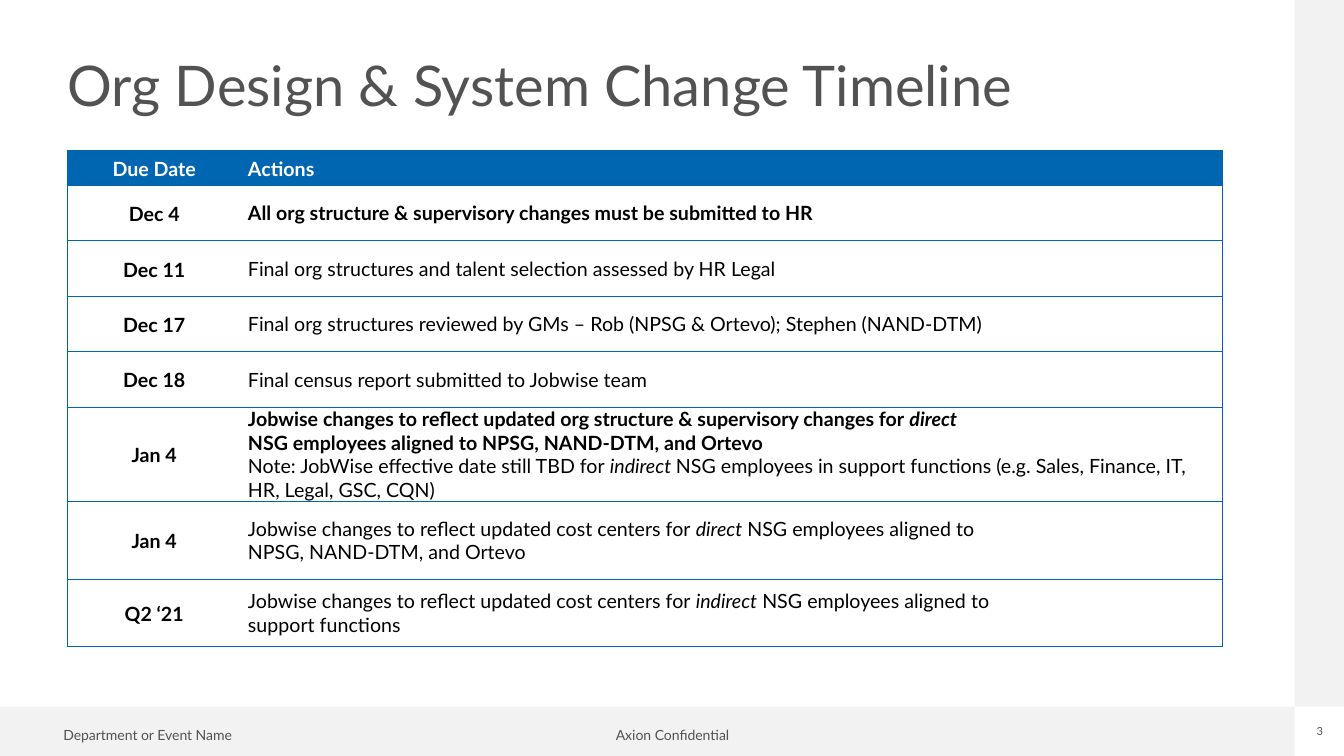
from dataclasses import dataclass

from lxml.etree import SubElement
from pptx import Presentation
from pptx.dml.color import RGBColor
from pptx.enum.shapes import MSO_SHAPE
from pptx.enum.text import MSO_ANCHOR, PP_ALIGN
from pptx.oxml.ns import qn
from pptx.util import Inches, Pt

FONT = "Lato"
COLORS = {
    "blue": "0066B1",
    "band": "F2F2F2",
    "gray": "525252",
    "black": "000000",
    "white": "FFFFFF",
}


@dataclass(frozen=True)
class Span:
    text: str
    bold: bool = False
    italic: bool = False


@dataclass(frozen=True)
class Milestone:
    due: str
    height: float
    action: list[list[Span]]


@dataclass(frozen=True)
class Band:
    left: float
    top: float
    width: float
    height: float


@dataclass(frozen=True)
class FooterNote:
    text: str
    left: float
    top: float
    width: float
    height: float
    size: int
    align: PP_ALIGN
    inset_x: float = 0.1
    inset_y: float = 0.05


COST_CENTERS = Span("Jobwise changes to reflect updated cost centers for ")
ALIGNED = Span(" NSG employees aligned to")
MILESTONES = [
    Milestone("Due Date", 0.35, [[Span("Actions", bold=True)]]),
    Milestone("Dec 4", 0.55, [
        [Span("All org structure & supervisory changes must be submitted to HR", bold=True)],
    ]),
    Milestone("Dec 11", 0.55, [
        [Span("Final org structures and talent selection assessed by HR Legal")],
    ]),
    Milestone("Dec 17", 0.55, [
        [Span("Final org structures reviewed by GMs – Rob (NPSG & Ortevo); Stephen (NAND-DTM)")],
    ]),
    Milestone("Dec 18", 0.55, [[Span("Final census report submitted to Jobwise team")]]),
    Milestone("Jan 4", 0.93, [
        [
            Span("Jobwise changes to reflect updated org structure & supervisory changes for ", bold=True),
            Span("direct", bold=True, italic=True),
        ],
        [Span("NSG employees aligned to NPSG, NAND-DTM, and Ortevo", bold=True)],
        [
            Span("Note: JobWise effective date still TBD for "),
            Span("indirect ", italic=True),
            Span("NSG employees in support functions (e.g. Sales, Finance, IT, HR, Legal, GSC, CQN)"),
        ],
    ]),
    Milestone("Jan 4", 0.77, [
        [COST_CENTERS, Span("direct", italic=True), ALIGNED],
        [Span("NPSG, NAND-DTM, and Ortevo")],
    ]),
    Milestone("Q2 ‘21", 0.67, [
        [COST_CENTERS, Span("indirect", italic=True), ALIGNED],
        [Span("support functions")],
    ]),
]
BANDS = [Band(0, 7.01, 12.84, 0.49), Band(12.84, 0, 0.49, 7.01)]
FOOTER_NOTES = [
    FooterNote("Axion Confidential", 5.87, 7.18, 1.6, 0.25, 10, PP_ALIGN.CENTER),
    FooterNote("Department or Event Name", 0.53, 7.18, 1.93, 0.25, 10, PP_ALIGN.LEFT),
    FooterNote("3", 13.02, 7.2, 0.14, 0.13, 8, PP_ALIGN.CENTER, 0, 0),
]
COLUMN_WIDTHS = [1.72, 9.73]


def color(name: str) -> RGBColor:
    return RGBColor.from_string(COLORS[name])


def style_paragraph(paragraph, size: int, tint: str, align: PP_ALIGN, spacing: float) -> None:
    paragraph.alignment = align
    paragraph.line_spacing = spacing
    paragraph.font.name = FONT
    paragraph.font.size = Pt(size)
    paragraph.font.color.rgb = color(tint)


def draw_band(slide, band: Band) -> None:
    strip = slide.shapes.add_shape(
        MSO_SHAPE.RECTANGLE, Inches(band.left), Inches(band.top),
        Inches(band.width), Inches(band.height))
    strip.shadow.inherit = False
    strip.fill.solid()
    strip.fill.fore_color.rgb = color("band")
    strip.line.fill.background()


def draw_footer_note(slide, note: FooterNote) -> None:
    frame = slide.shapes.add_textbox(
        Inches(note.left), Inches(note.top), Inches(note.width), Inches(note.height)).text_frame
    frame.word_wrap = False
    frame.margin_left = frame.margin_right = Inches(note.inset_x)
    frame.margin_top = frame.margin_bottom = Inches(note.inset_y)
    frame.text = note.text
    style_paragraph(frame.paragraphs[0], note.size, "gray", note.align, 0.9)


def draw_title(slide, text: str) -> None:
    title = slide.shapes.title
    title.left, title.top = Inches(0.67), Inches(0.58)
    title.width, title.height = Inches(12.04), Inches(1.04)
    frame = title.text_frame
    frame.margin_left = frame.margin_right = frame.margin_top = frame.margin_bottom = 0
    frame.vertical_anchor = MSO_ANCHOR.TOP
    frame.word_wrap = True
    frame.text = text
    style_paragraph(frame.paragraphs[0], 40, "gray", PP_ALIGN.LEFT, 0.9)


def set_borders(cell, hidden_side: str) -> None:
    properties = cell._tc.get_or_add_tcPr()
    for side in ("lnL", "lnR", "lnT", "lnB"):
        border = SubElement(properties, qn(f"a:{side}"), w=str(Pt(0.75)))
        if side == hidden_side:
            SubElement(border, qn("a:noFill"))
        else:
            fill = SubElement(border, qn("a:solidFill"))
            SubElement(fill, qn("a:srgbClr"), val=COLORS["blue"])


def fill_cell(cell, lines: list[list[Span]], is_header: bool, is_date: bool) -> None:
    set_borders(cell, "lnR" if is_date else "lnL")
    cell.fill.solid()
    cell.fill.fore_color.rgb = color("blue" if is_header else "white")
    cell.vertical_anchor = MSO_ANCHOR.MIDDLE
    cell.margin_left = cell.margin_right = Inches(0.07)
    cell.margin_top = cell.margin_bottom = 0
    align = PP_ALIGN.CENTER if is_date else PP_ALIGN.LEFT
    spacing = 1.07 if is_date or is_header else 1.0
    for index, line in enumerate(lines):
        frame = cell.text_frame
        paragraph = frame.add_paragraph() if index else frame.paragraphs[0]
        style_paragraph(paragraph, 14, "white" if is_header else "black", align, spacing)
        for span in line:
            run = paragraph.add_run()
            run.text = span.text
            run.font.bold = span.bold
            run.font.italic = span.italic


def draw_timeline(slide, milestones: list[Milestone]) -> None:
    table = slide.shapes.add_table(
        len(milestones), len(COLUMN_WIDTHS), Inches(0.67), Inches(1.49),
        Inches(sum(COLUMN_WIDTHS)), Inches(sum(m.height for m in milestones))).table
    table.horz_banding = False
    for column, width in zip(table.columns, COLUMN_WIDTHS):
        column.width = Inches(width)
    for index, milestone in enumerate(milestones):
        table.rows[index].height = Inches(milestone.height)
        is_header = index == 0
        fill_cell(table.cell(index, 0), [[Span(milestone.due, bold=True)]], is_header, True)
        fill_cell(table.cell(index, 1), milestone.action, is_header, False)


def main() -> None:
    deck = Presentation()
    deck.slide_width, deck.slide_height = Inches(13.33), Inches(7.5)
    slide = deck.slides.add_slide(deck.slide_layouts[5])
    for band in BANDS:
        draw_band(slide, band)
    for note in FOOTER_NOTES:
        draw_footer_note(slide, note)
    draw_title(slide, "Org Design & System Change Timeline")
    draw_timeline(slide, MILESTONES)
    deck.save("out.pptx")


if __name__ == "__main__":
    main()
